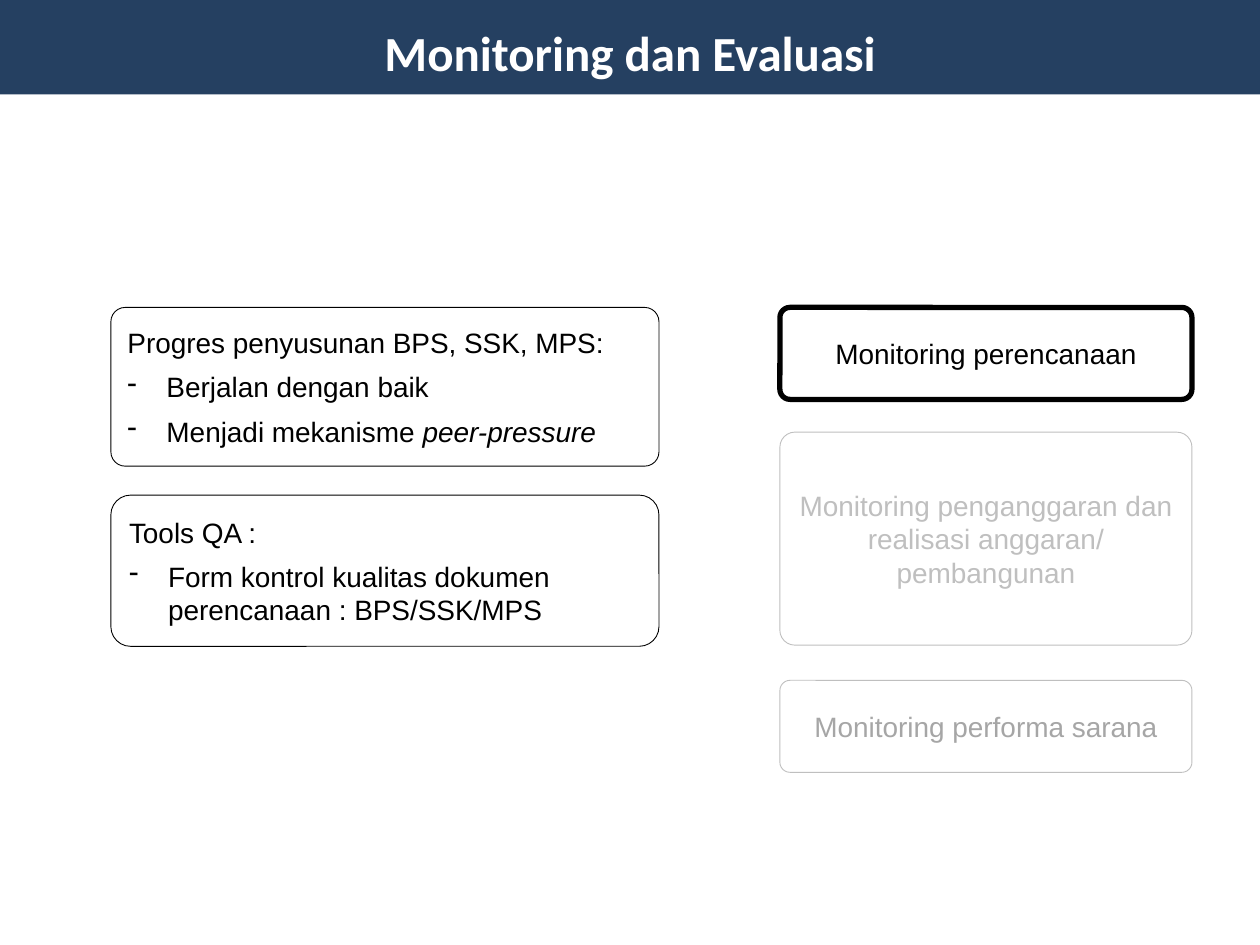
import pptx
import pptx.util
import pptx.dml.color
import pptx.enum.shapes
import pptx.enum.text
import lxml.etree

Inches = pptx.util.Inches
Pt = pptx.util.Pt
Shape = pptx.enum.shapes.MSO_SHAPE
Align = pptx.enum.text.PP_ALIGN
Anchor = pptx.enum.text.MSO_ANCHOR
rgb = pptx.dml.color.RGBColor.from_string

theme = {
    "band": "254061", "white": "FFFFFF", "ink": "000000",
    "pale": "BFBFBF", "gray": "A6A6A6",
    "head": "Calibri", "body": "Arial", "big": 28, "size": 16,
}


def write(para, text, font=theme["body"], size=theme["size"], color=theme["ink"],
          bold=False, align=Align.LEFT, after=6, bullet=False):
    """Write text into a paragraph; parts between asterisks are italic."""
    para.alignment = align
    para.space_after = Pt(after)
    if bullet:
        props = para._p.get_or_add_pPr()
        props.set("marL", str(Inches(0.31)))
        props.set("indent", str(Inches(-0.31)))
        mark = lxml.etree.SubElement(props, pptx.oxml.ns.qn("a:buChar"))
        mark.set("char", "-")
    for i, part in enumerate(text.split("*")):
        if part:
            run = para.add_run()
            run.text = part
            run.font.name = font
            run.font.size = Pt(size)
            run.font.bold = bold
            run.font.italic = i % 2 == 1
            run.font.color.rgb = rgb(color)


def draw(kind, left, top, width, height, fill, line=None, weight=0.5):
    """Add a filled shape, outlined only when a line colour is given."""
    shape = slide.shapes.add_shape(
        kind, Inches(left), Inches(top), Inches(width), Inches(height))
    shape.shadow.inherit = False
    shape.fill.solid()
    shape.fill.fore_color.rgb = rgb(fill)
    if line:
        shape.line.color.rgb = rgb(line)
        shape.line.width = Pt(weight)
    else:
        shape.line.fill.background()
    return shape


deck = pptx.Presentation()
deck.slide_width, deck.slide_height = Inches(10), Inches(7.5)
slide = deck.slides.add_slide(deck.slide_layouts[5])

# Title on its band
title = slide.shapes.title
band = draw(Shape.RECTANGLE, 0, -0.02, 10, 0.77, theme["band"])
title._element.addprevious(band._element)
title.left, title.top = Inches(0.73), Inches(0.07)
title.width, title.height = Inches(8.54), Inches(0.68)
frame = title.text_frame
frame.margin_left = frame.margin_right = frame.margin_top = frame.margin_bottom = 0
frame.vertical_anchor = Anchor.MIDDLE
write(frame.paragraphs[0], "Monitoring dan Evaluasi", font=theme["head"],
      size=theme["big"], color=theme["white"], bold=True, align=Align.CENTER, after=0)

# Columns: left, width, alignment
notes = (0.88, 4.35, Align.LEFT)
stages = (6.19, 3.27, Align.CENTER)

# Boxes: column, top, height, corner, line, weight, text colour, lines
boxes = [
    (stages, 2.44, 0.73, 0.11, "ink", 3, "ink", ["Monitoring perencanaan"]),
    (stages, 3.43, 1.69, 0.07, "pale", 0.5, "pale",
     ["Monitoring penganggaran dan realisasi anggaran/ pembangunan"]),
    (stages, 5.4, 0.73, 0.11, "pale", 0.5, "gray", ["Monitoring performa sarana"]),
    (notes, 2.44, 1.26, 0.09, "ink", 0.5, "ink",
     ["Progres penyusunan BPS, SSK, MPS:", "Berjalan dengan baik",
      "Menjadi mekanisme *peer-pressure*"]),
    (notes, 3.93, 1.2, 0.13, "ink", 0.5, "ink",
     ["Tools QA :", "Form kontrol kualitas dokumen perencanaan : BPS/SSK/MPS"]),
]
for (left, width, align), top, height, corner, line, weight, color, lines in boxes:
    box = draw(Shape.ROUNDED_RECTANGLE, left, top, width, height,
               theme["white"], theme[line], weight)
    box.adjustments[0] = corner
    frame = box.text_frame
    frame.word_wrap = True
    frame.vertical_anchor = Anchor.MIDDLE
    for i, text in enumerate(lines):
        para = frame.add_paragraph() if i else frame.paragraphs[0]
        write(para, text, color=theme[color], align=align, bullet=i > 0)

deck.save("out.pptx")
